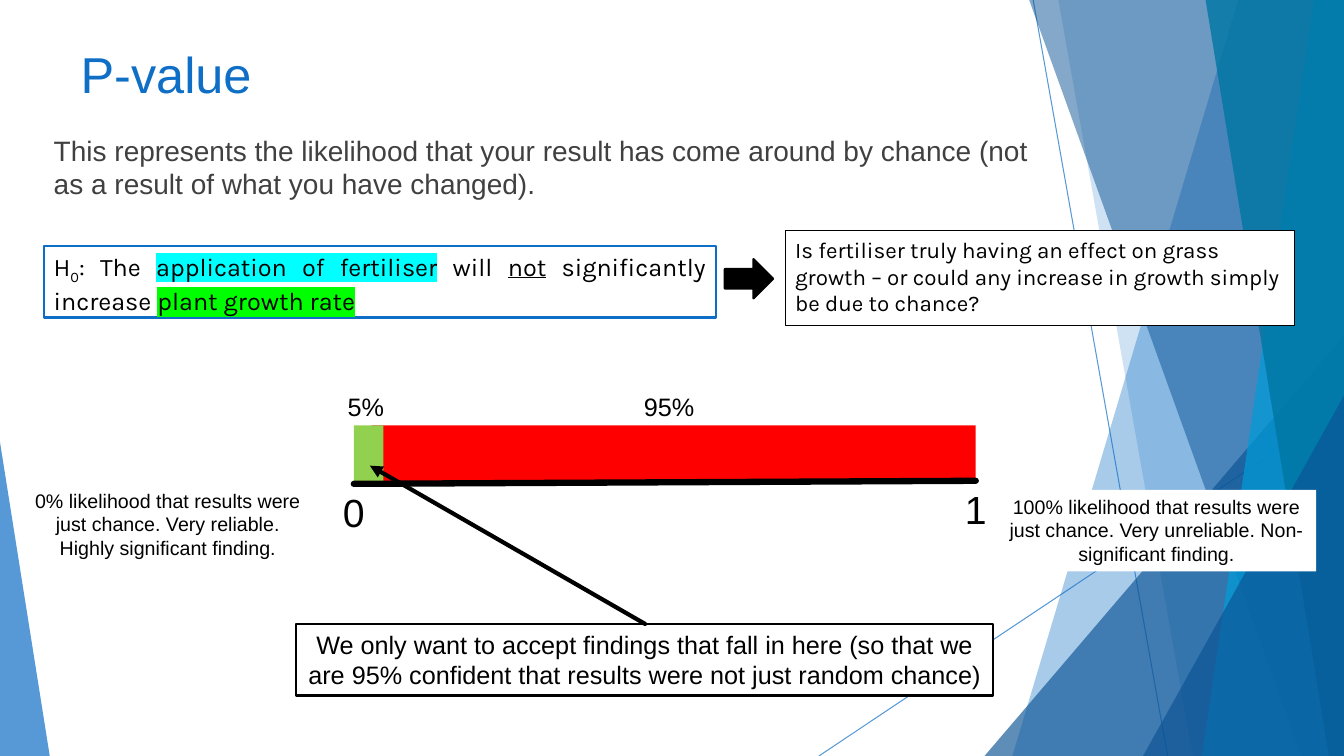
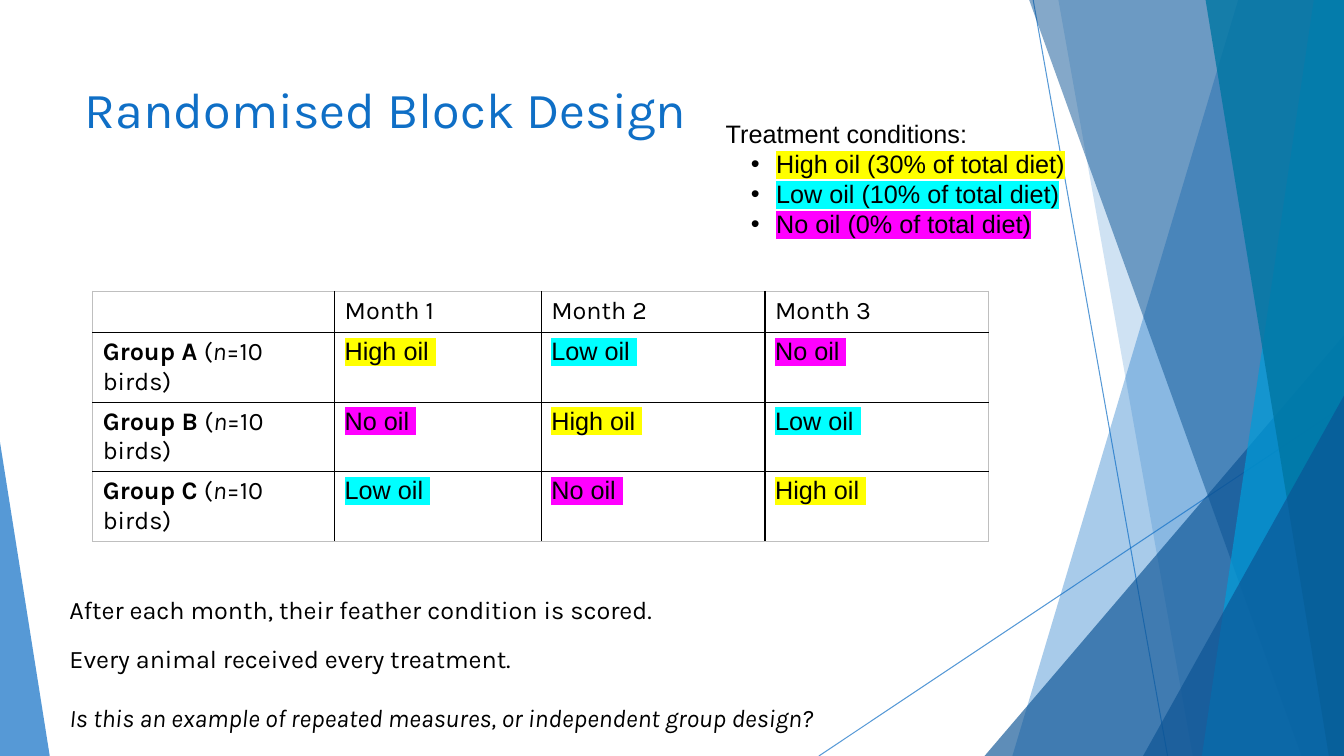
from dataclasses import dataclass
from typing import NamedTuple, Optional

from lxml import etree
from pptx import Presentation, util as u
from pptx.dml.color import RGBColor
from pptx.enum import shapes as kinds, text as txt
from pptx.oxml import ns

SLIDE_W, SLIDE_H = u.Inches(13.33), u.Inches(7.5)
COLUMNS, ROWS = 40, 30


@dataclass(frozen=True)
class Theme:
    blue: str = "0F6FC6"
    navy: str = "0B5394"
    cyan: str = "009DD9"
    teal: str = "0076A3"
    black: str = "000000"
    white: str = "FFFFFF"
    grey_text: str = "404040"
    grid_edge: str = "BFBFBF"
    red: str = "FF0000"
    green: str = "92D050"
    mark_yellow: str = "FFFF00"
    mark_aqua: str = "00FFFF"
    mark_pink: str = "FF00FF"
    mark_lime: str = "00FF00"
    sans: str = "Arial"
    round_sans: str = "Karla"
    title: int = 36
    scale: int = 28
    lead: int = 20
    body: int = 18
    question: int = 16
    small: int = 14


T = Theme()


class Box(NamedTuple):
    """Place on the grid: column, row, columns wide, rows high."""
    col: float
    row: float
    wide: float
    high: float


class Facet(NamedTuple):
    """Band from a slanted left edge to the right side of the slide."""
    top_col: float
    bottom_col: float
    color: str
    opacity: int


class Wedge(NamedTuple):
    box: Box
    apex: float
    color: str
    opacity: int


class Run(NamedTuple):
    text: str
    style: dict = {}


@dataclass
class Para:
    runs: list[Run]
    align: Optional[txt.PP_ALIGN] = txt.PP_ALIGN.LEFT
    before: float = 0
    after: float = 0
    bullet: bool = False


BACKDROP = [
    Facet(36.85, 30.13, T.blue, 36),
    Facet(31.5, 35.5, T.blue, 20),
    Wedge(Box(29.3, 13.3, 10.7, 16.7), 1, T.navy, 66),
    Facet(30.63, 38.74, T.navy, 50),
    Facet(39.1, 35.77, T.cyan, 70),
    Facet(35.88, 39.55, T.teal, 80),
    Wedge(Box(34.02, 15.7, 5.98, 14.3), 1, T.navy, 66),
    Wedge(Box(0, 17.55, 1.48, 12.45), 0, T.blue, 70),
]
RAYS = [((30.75, 0), (34.75, ROWS)), ((COLUMNS, 16.1), (24.37, ROWS))]


# Grid and colour helpers
def x(cols: float) -> int:
    return round(SLIDE_W * cols / COLUMNS)


def y(rows: float) -> int:
    return round(SLIDE_H * rows / ROWS)


def place(box: Box) -> tuple[int, int, int, int]:
    return x(box.col), y(box.row), x(box.wide), y(box.high)


def rgb(color: str) -> RGBColor:
    return RGBColor.from_string(color)


def child(parent, tag: str, **attributes: str):
    return etree.SubElement(parent, ns.qn(tag), attributes)


def set_opacity(shape, percent: int) -> None:
    child(shape.element.xpath(".//a:srgbClr")[0], "a:alpha", val=str(percent * 1000))


# Text
def add_run(paragraph, text: str, *, size: float = T.body, font: str = T.sans,
            color: str = T.black, bold: bool = False, italic: bool = False,
            underline: bool = False, baseline: int = 0, mark: str = "") -> None:
    run = paragraph.add_run()
    run.text = text
    face = run.font
    face.size, face.name = u.Pt(size), font
    face.color.rgb = rgb(color)
    face.bold, face.italic, face.underline = bold, italic, underline
    props = run._r.get_or_add_rPr()
    if baseline:
        props.set("baseline", str(baseline * 1000))
    if mark:
        highlight = etree.Element(ns.qn("a:highlight"))
        child(highlight, "a:srgbClr", val=mark)
        props.find(ns.qn("a:latin")).addprevious(highlight)


def write(frame, paras: list[Para], **shared) -> None:
    for index, para in enumerate(paras):
        line = frame.paragraphs[0] if index == 0 else frame.add_paragraph()
        line.alignment = para.align
        line.space_before, line.space_after = u.Pt(para.before), u.Pt(para.after)
        props = line._p.get_or_add_pPr()
        props.set("marL", str(u.Inches(0.5) if para.bullet else 0))
        props.set("indent", str(-u.Inches(0.25) if para.bullet else 0))
        if para.bullet:
            child(props, "a:buChar", char="•")
        else:
            child(props, "a:buNone")
        for run in para.runs:
            add_run(line, run.text, **{**shared, **run.style})


def plain(text: str, **layout) -> list[Para]:
    return [Para([Run(text)], **layout)]


def centred(text: str) -> list[Para]:
    return plain(text, align=txt.PP_ALIGN.CENTER)


def prepare(frame, wrap: bool = True) -> None:
    frame.word_wrap = wrap
    frame.auto_size = txt.MSO_AUTO_SIZE.NONE
    frame.vertical_anchor = txt.MSO_ANCHOR.TOP


def add_text(slide, box: Box, paras: list[Para], *, wrap: bool = True, fill: str = "",
             edge: str = "", edge_width: float = 1.5, **style) -> None:
    holder = slide.shapes.add_textbox(*place(box))
    prepare(holder.text_frame, wrap)
    if fill:
        holder.fill.solid()
        holder.fill.fore_color.rgb = rgb(fill)
    if edge:
        holder.line.color.rgb = rgb(edge)
        holder.line.width = u.Pt(edge_width)
    write(holder.text_frame, paras, **style)


def fill_placeholder(holder, box: Box, paras: list[Para], top: float = 0.05, **style) -> None:
    holder.left, holder.top, holder.width, holder.height = place(box)
    prepare(holder.text_frame)
    holder.text_frame.margin_top = u.Inches(top)
    write(holder.text_frame, paras, **style)


def add_title(slide, box: Box, text: str, font: str) -> None:
    fill_placeholder(slide.shapes.title, box, plain(text), top=0.1,
                     size=T.title, font=font, color=T.blue)


# Shapes and lines
def paint(shape, color: str):
    shape.shadow.inherit = False
    shape.fill.solid()
    shape.fill.fore_color.rgb = rgb(color)
    shape.line.fill.background()
    return shape


def add_block(slide, kind, box: Box, color: str):
    return paint(slide.shapes.add_shape(kind, *place(box)), color)


def add_line(slide, start: tuple, end: tuple, width: float, color: str = T.black,
             arrow: bool = False, cap: str = "flat"):
    line = slide.shapes.add_connector(kinds.MSO_CONNECTOR.STRAIGHT, x(start[0]), y(start[1]),
                                      x(end[0]), y(end[1]))
    line.line.color.rgb = rgb(color)
    line.line.width = u.Pt(width)
    outline = line.get_or_add_ln()
    outline.set("cap", cap)
    if arrow:
        child(outline, "a:tailEnd", type="triangle")
    child(line.element.spPr, "a:effectLst")
    return line


# Shared backdrop, kept on the master
def draw_backdrop(slide, master) -> None:
    parts = []
    for start, end in RAYS:
        parts.append((add_line(slide, start, end, 0.75, T.blue), 70))
    for part in BACKDROP:
        if isinstance(part, Facet):
            outline = slide.shapes.build_freeform(x(part.top_col), 0, 1.0)
            outline.add_line_segments([(x(COLUMNS), 0), (x(COLUMNS), y(ROWS)),
                                       (x(part.bottom_col), y(ROWS))], close=True)
            shape = paint(outline.convert_to_shape(), part.color)
        else:
            shape = add_block(slide, kinds.MSO_SHAPE.ISOSCELES_TRIANGLE, part.box, part.color)
            shape.adjustments[0] = part.apex
        parts.append((shape, part.opacity))
    for index, (shape, opacity) in enumerate(parts):
        set_opacity(shape, opacity)
        shape.element.xpath(".//p:cNvPr")[0].set("id", str(100 + index))
        master.shapes.element.insert(2 + index, shape.element)


# P-value slide
def build_p_value(slide) -> None:
    add_title(slide, Box(2.1, 1.32, 35.34, 4.16), "P-value", T.sans)
    fill_placeholder(slide.placeholders[1], Box(1.3, 4.96, 30.6, 3.28), plain(
        "This represents the likelihood that your result has come around by chance "
        "(not as a result of what you have changed)."),
        top=0.08, size=T.lead, color=T.grey_text)

    # Probability bar and its scale
    rect = kinds.MSO_SHAPE.RECTANGLE
    add_block(slide, rect, Box(11.06, 16.88, 17.98, 2.32), T.red)
    add_block(slide, rect, Box(10.53, 16.88, 0.88, 2.32), T.green)
    for digit, col, row in (("0", 9.9, 19.2), ("1", 28.41, 19.08)):
        add_text(slide, Box(col, row, 1.26, 2.28), centred(digit), wrap=False, size=T.scale)
    add_line(slide, (10.53, 19.2), (29.04, 19.08), 4.5, cap="rnd")
    for share, col, wide in (("95%", 18.87, 10.17), ("5%", 10.05, 2.07)):
        add_text(slide, Box(col, 15.32, wide, 1.6), plain(share))

    # Meaning of both ends and of the accepted zone
    add_text(slide, Box(0.66, 19.2, 8.67, 3.24), centred(
        "0% likelihood that results were just chance. Very reliable. "
        "Highly significant finding."), size=T.small)
    add_text(slide, Box(29.67, 19.44, 9.5, 3.24), centred(
        "100% likelihood that results were just chance. Very unreliable. "
        "Non-significant finding."), size=T.small, fill=T.white)
    add_text(slide, Box(8.82, 24.76, 20.73, 2.84), centred(
        "We only want to accept findings that fall in here (so that we are 95% "
        "confident that results were not just random chance)"), fill=T.white, edge=T.black)
    add_line(slide, (19.2, 24.76), (11.01, 18.48), 3, arrow=True, cap="rnd")

    # Null hypothesis and the question it raises
    hypothesis = Para([
        Run("H"), Run("0", {"baseline": -25}), Run(": The "),
        Run("application of fertiliser", {"mark": T.mark_aqua}), Run(" will "),
        Run("not", {"underline": True}), Run(" significantly increase "),
        Run("plant growth rate", {"mark": T.mark_lime}),
    ], align=txt.PP_ALIGN.JUSTIFY, after=8)
    add_text(slide, Box(1.3, 9.76, 20, 2.84), [hypothesis], font=T.round_sans,
             fill=T.white, edge=T.blue)
    add_text(slide, Box(23.37, 9.16, 15.15, 3.76), plain(
        "Is fertiliser truly having an effect on grass growth – or could any increase "
        "in growth simply be due to chance?"), size=T.question, font=T.round_sans,
        fill=T.white, edge=T.black, edge_width=0.75)
    pointer = add_block(slide, kinds.MSO_SHAPE.RIGHT_ARROW, Box(21.57, 10.28, 1.44, 1.56), T.black)
    pointer.line.color.rgb = rgb(T.black)
    pointer.line.width = u.Pt(1.5)


# Block design slide
DIETS = {"High": ("30%", T.mark_yellow), "Low": ("10%", T.mark_aqua), "No": ("0%", T.mark_pink)}
SCHEDULE = {"A": ("High", "Low", "No"), "B": ("No", "High", "Low"), "C": ("Low", "No", "High")}


def set_borders(cell, outer: dict[str, bool]) -> None:
    props = cell._tc.get_or_add_tcPr()
    for index, (side, at_edge) in enumerate(outer.items()):
        line = etree.Element(ns.qn(f"a:{side}"), {"w": str(u.Pt(0.75 if at_edge else 1))})
        child(child(line, "a:solidFill"), "a:srgbClr", val=T.grid_edge if at_edge else T.black)
        props.insert(index, line)


def add_schedule(slide) -> None:
    widths, heights = (7.2, 6.15, 6.66, 6.66), (1.64, 2.76, 2.76, 2.76)
    box = Box(2.76, 11.56, sum(widths), sum(heights))
    table = slide.shapes.add_table(len(heights), len(widths), *place(box)).table
    table.first_row = table.horz_banding = False
    for column, wide in zip(table.columns, widths):
        column.width = x(wide)
    for row, high in zip(table.rows, heights):
        row.height = y(high)

    contents = [[[]] + [[Run(f"Month {month}")] for month in (1, 2, 3)]]
    for group, diets in SCHEDULE.items():
        label = [Run(f"Group {group} ", {"bold": True}), Run("("),
                 Run("n", {"italic": True}), Run("=10 birds)")]
        contents.append([label] + [
            [Run(f"{diet} oil ", {"font": T.sans, "mark": DIETS[diet][1]})] for diet in diets])
    for r, line in enumerate(contents):
        for c, runs in enumerate(line):
            cell = table.cell(r, c)
            cell.fill.background()
            set_borders(cell, {"lnL": c == 0, "lnR": c == len(widths) - 1,
                               "lnT": r == 0, "lnB": r == len(heights) - 1})
            if runs:
                write(cell.text_frame, [Para(runs)], font=T.round_sans)


def build_block_design(slide) -> None:
    add_title(slide, Box(2.22, 2.68, 28.2, 5.76), "Randomised Block Design", T.round_sans)
    treatments = [Para([Run(f"{diet} oil ({share} of total diet)", {"mark": mark})], bullet=True)
                  for diet, (share, mark) in DIETS.items()]
    fill_placeholder(slide.placeholders[1], Box(21.3, 4.48, 18.7, 5.24),
                     plain("Treatment conditions:") + treatments)
    add_schedule(slide)
    add_text(slide, Box(1.77, 23.4, 23.2, 1.6),
             plain("After each month, their feather condition is scored."), font=T.round_sans)
    question = "Is this an example of repeated measures, or independent group design?"
    add_text(slide, Box(1.77, 25.32, 29.73, 4.04),
             plain("Every animal received every treatment.")
             + [Para([Run(question, {"italic": True})], before=21)], font=T.round_sans)


def main() -> None:
    deck = Presentation()
    deck.slide_width, deck.slide_height = SLIDE_W, SLIDE_H
    p_value, block_design = (deck.slides.add_slide(deck.slide_layouts[1]) for _ in range(2))
    draw_backdrop(p_value, deck.slide_master)
    build_p_value(p_value)
    build_block_design(block_design)
    deck.save("out.pptx")


if __name__ == "__main__":
    main()
